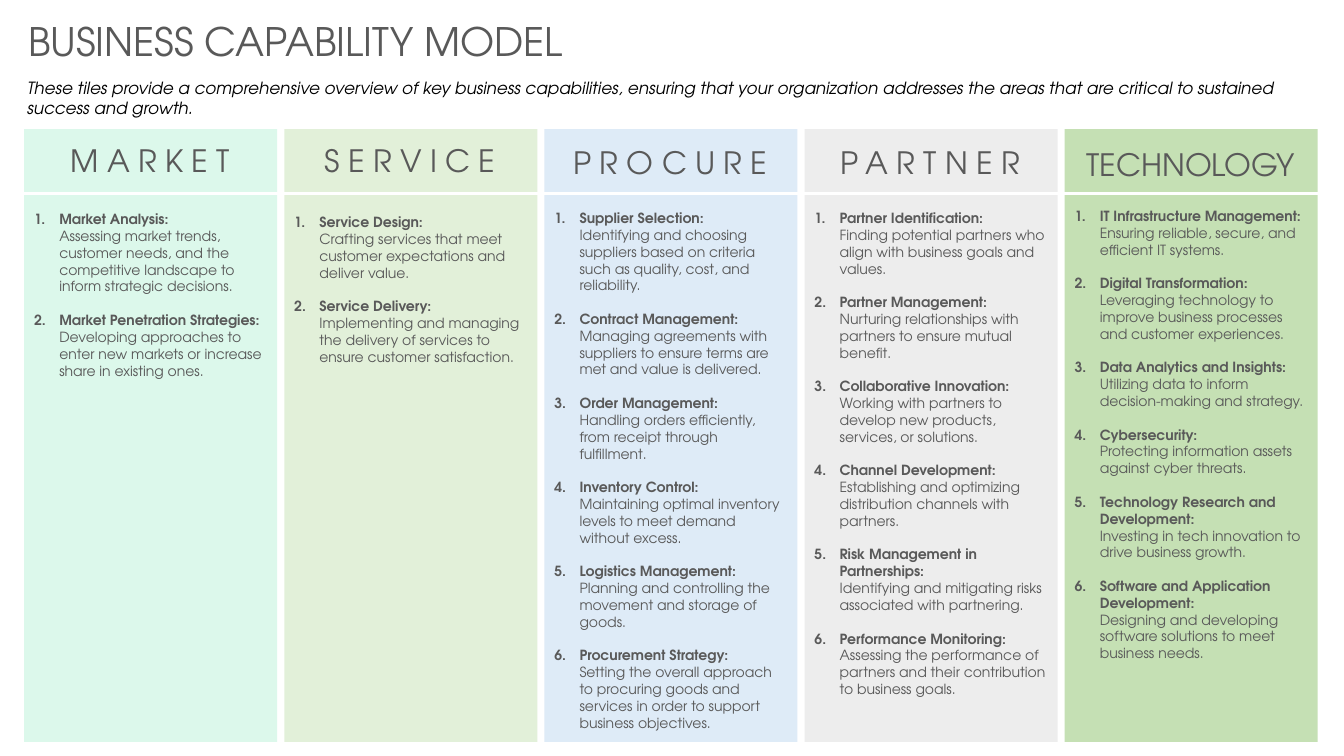
from copy import deepcopy

from lxml.etree import SubElement
from pptx import Presentation
from pptx.dml.color import RGBColor
from pptx.enum.shapes import MSO_CONNECTOR, MSO_SHAPE
from pptx.enum.text import MSO_AUTO_SIZE, PP_ALIGN
from pptx.oxml.ns import qn
from pptx.util import Inches, Pt

FONT = "TeX Gyre Adventor"
COLORS = {
    "text": "595959", "intro": "000000", "rule": "FFFFFF",
    "market": "DCF8EB", "service": "E2F0D9", "procure": "DEEBF7",
    "partner": "EDEDED", "technology": "C5E0B4",
}
LEFT, PITCH, COL_W = 0.24, 2.58, 2.51
TOP, COL_H, RULE_Y = 1.28, 6.08, 1.92
TEXT_W, HEAD_H = 2.5, 0.47

COLUMNS = [
    ("MARKET", 6, 1.36, 2.04, 1.92, [
        ("Market Analysis:", "Assessing market trends, customer needs, and the competitive landscape to inform strategic decisions."),
        ("Market Penetration Strategies:", "Developing approaches to enter new markets or increase share in existing ones."),
    ]),
    ("SERVICE", 6, 1.36, 2.07, 1.62, [
        ("Service Design:", "Crafting services that meet customer expectations and deliver value."),
        ("Service Delivery:", "Implementing and managing the delivery of services to ensure customer satisfaction."),
    ]),
    ("PROCURE", 6, 1.38, 2.03, 5.32, [
        ("Supplier Selection:", "Identifying and choosing suppliers based on criteria such as quality, cost, and reliability."),
        ("Contract Management:", "Managing agreements with suppliers to ensure terms are met and value is delivered."),
        ("Order Management:", "Handling orders efficiently, from receipt through fulfillment."),
        ("Inventory Control:", "Maintaining optimal inventory levels to meet demand without excess."),
        ("Logistics Management:", "Planning and controlling the movement and storage of goods."),
        ("Procurement Strategy:", "Setting the overall approach to procuring goods and services in order to support business objectives."),
    ]),
    ("PARTNER", 6, 1.38, 2.03, 4.98, [
        ("Partner Identification:", "Finding potential partners who align with business goals and values."),
        ("Partner Management:", "Nurturing relationships with partners to ensure mutual benefit."),
        ("Collaborative Innovation:", "Working with partners to develop new products, services, or solutions."),
        ("Channel Development:", "Establishing and optimizing distribution channels with partners."),
        ("Risk Management in Partnerships:", "Identifying and mitigating risks associated with partnering."),
        ("Performance Monitoring:", "Assessing the performance of partners and their contribution to business goals."),
    ]),
    ("TECHNOLOGY", 0, 1.4, 2.01, 4.64, [
        ("IT Infrastructure Management:", "Ensuring reliable, secure, and efficient IT systems."),
        ("Digital Transformation:", "Leveraging technology to improve business processes and customer experiences."),
        ("Data Analytics and Insights:", "Utilizing data to inform decision-making and strategy."),
        ("Cybersecurity:", "Protecting information assets against cyber threats."),
        ("Technology Research and Development:", "Investing in tech innovation to drive business growth."),
        ("Software and Application Development:", "Designing and developing software solutions to meet business needs."),
    ]),
]


def rgb(name):
    return RGBColor.from_string(COLORS[name])


def add_box(s, x, y, w, h):
    sp = s.shapes.add_textbox(Inches(x), Inches(y), Inches(w), Inches(h))
    tf = sp.text_frame
    tf.word_wrap = True
    tf.auto_size = MSO_AUTO_SIZE.SHAPE_TO_FIT_TEXT
    return tf


def add_run(p, text, size, color="text", bold=False, italic=False):
    r = p.add_run()
    r.text = text
    r.font.name = FONT
    r.font.size = Pt(size)
    r.font.bold = bold
    r.font.italic = italic
    r.font.color.rgb = rgb(color)
    return r


def add_panel(s, x, color):
    sp = s.shapes.add_shape(MSO_SHAPE.RECTANGLE, Inches(x), Inches(TOP),
                            Inches(COL_W), Inches(COL_H))
    sp.shadow.inherit = False
    sp.fill.solid()
    sp.fill.fore_color.rgb = rgb(color)
    sp.line.fill.background()


def add_rule(s):
    line = s.shapes.add_connector(MSO_CONNECTOR.STRAIGHT, Inches(LEFT), Inches(RULE_Y),
                                  Inches(13.2), Inches(RULE_Y))
    line.line.color.rgb = rgb("rule")
    line.line.width = Pt(2.25)
    SubElement(line._element.spPr, qn("a:effectLst"))


def add_heading(s, x, y, text, spacing):
    p = add_box(s, x, y, TEXT_W, HEAD_H).paragraphs[0]
    p.alignment = PP_ALIGN.CENTER
    r = add_run(p, text, 22)
    r.font._element.set("spc", str(spacing * 100))


def number_paragraph(p):
    pPr = p._p.get_or_add_pPr()
    pPr.set("marL", str(Inches(0.25)))
    pPr.set("indent", str(-Inches(0.25)))
    SubElement(pPr, qn("a:buFont"), typeface="+mj-lt")
    SubElement(pPr, qn("a:buAutoNum"), type="arabicPeriod")


def add_capabilities(s, x, y, h, items):
    tf = add_box(s, x, y, TEXT_W, h)
    for i, (name, description) in enumerate(items):
        p = tf.add_paragraph() if i else tf.paragraphs[0]
        if i < len(items) - 1:
            p.space_after = Pt(12)
        number_paragraph(p)
        r = add_run(p, name, 10, bold=True)
        p.add_line_break()
        p._p[-1].append(deepcopy(r.font._element))
        add_run(p, description, 10)


def main():
    prs = Presentation()
    prs.slide_width, prs.slide_height = Inches(13.33), Inches(7.5)
    s = prs.slides.add_slide(prs.slide_layouts[6])

    title = add_box(s, 0.18, 0.12, 12.95, 0.57)
    add_run(title.paragraphs[0], "BUSINESS CAPABILITY MODEL", 28)
    intro = add_box(s, 0.17, 0.72, 12.92, 0.5)
    add_run(intro.paragraphs[0],
            "These tiles provide a comprehensive overview of key business capabilities, "
            "ensuring that your organization addresses the areas that are critical to "
            "sustained success and growth.", 12, "intro", italic=True)

    lefts = [LEFT + i * PITCH for i in range(len(COLUMNS))]
    for x, column in zip(lefts, COLUMNS):
        add_panel(s, x, column[0].lower())
    add_rule(s)
    for x, (name, spacing, head_y, list_y, list_h, items) in zip(lefts, COLUMNS):
        add_heading(s, x, head_y, name, spacing)
        add_capabilities(s, x, list_y, list_h, items)

    prs.save("out.pptx")


if __name__ == "__main__":
    main()
